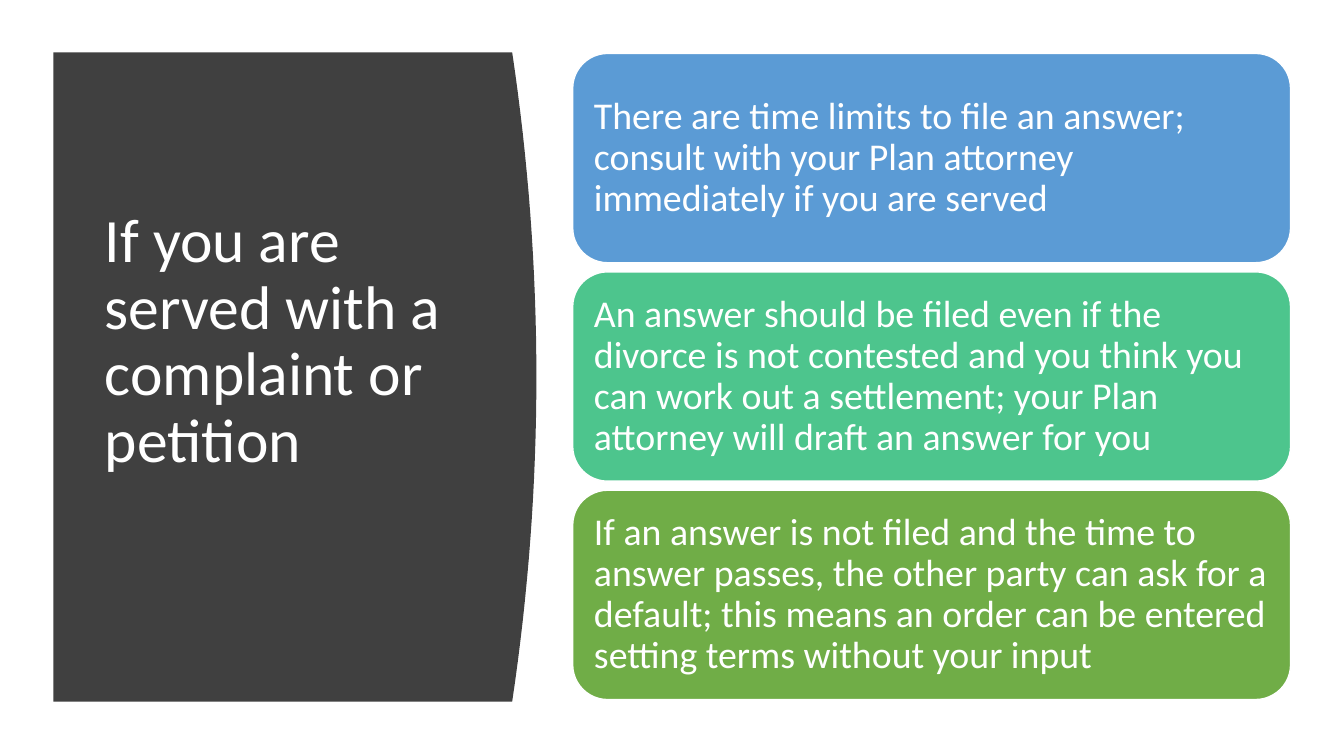
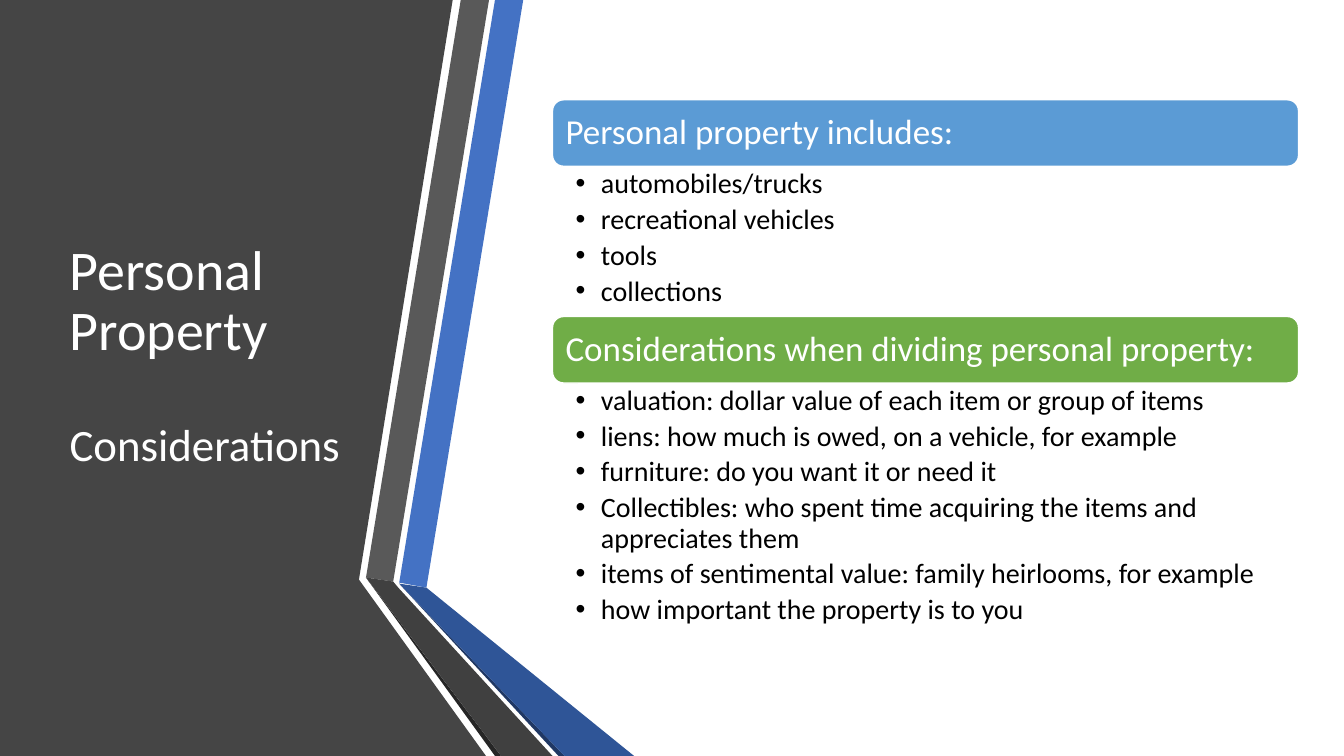
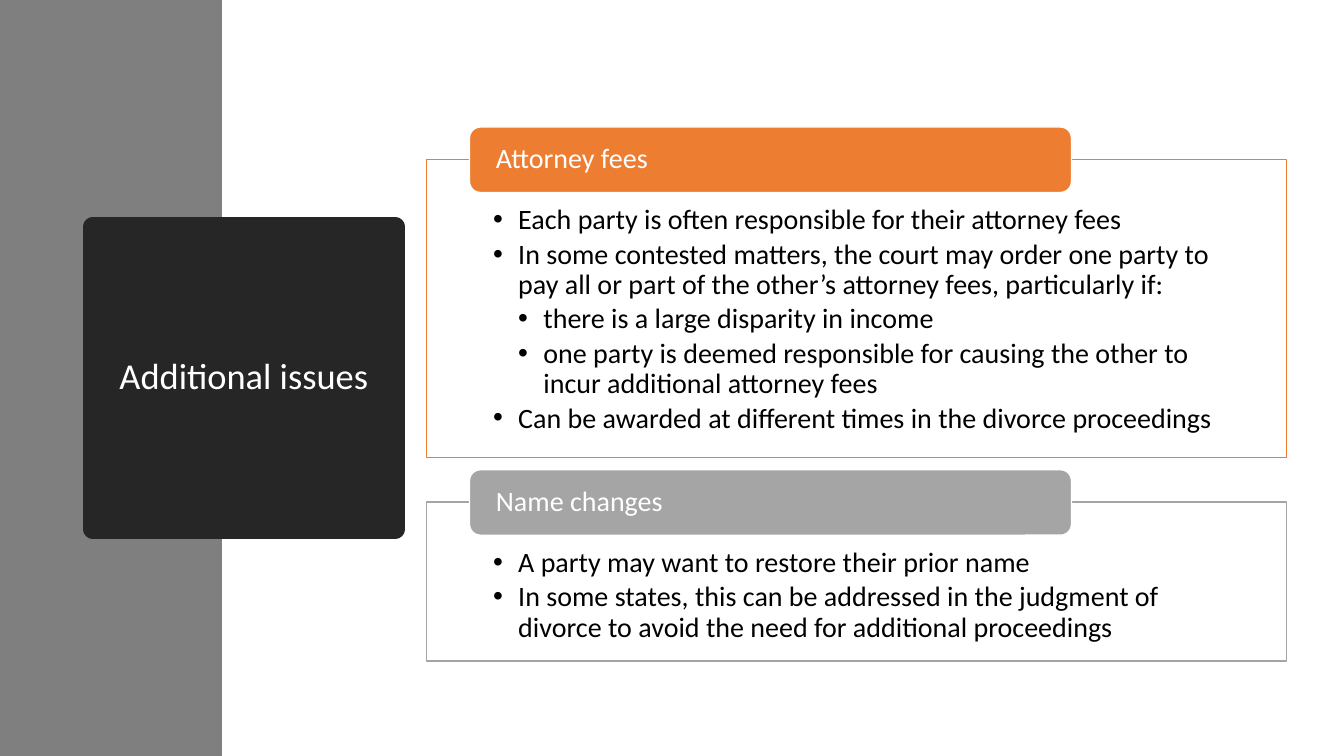
import pptx
import pptx.dml.color
import pptx.enum.shapes
import pptx.enum.text
import pptx.util
from lxml import etree
from pptx.oxml.ns import qn

Inches = pptx.util.Inches
Pt = pptx.util.Pt
RGBColor = pptx.dml.color.RGBColor
ShapeType = pptx.enum.shapes.MSO_SHAPE
Align = pptx.enum.text.PP_ALIGN
Anchor = pptx.enum.text.MSO_ANCHOR

WHITE = RGBColor(0xFF, 0xFF, 0xFF)
BLACK = RGBColor(0x00, 0x00, 0x00)
CHARCOAL = RGBColor(0x40, 0x40, 0x40)
PANEL_GRAY = RGBColor(0x45, 0x45, 0x45)
STRIPE_GRAY = RGBColor(0x59, 0x59, 0x59)
BAND_GRAY = RGBColor(0x7F, 0x7F, 0x7F)
SILVER = RGBColor(0xA5, 0xA5, 0xA5)
NEAR_BLACK = RGBColor(0x26, 0x26, 0x26)
SKY = RGBColor(0x5B, 0x9B, 0xD5)
MINT = RGBColor(0x4D, 0xC5, 0x8D)
GREEN = RGBColor(0x70, 0xAD, 0x47)
ORANGE = RGBColor(0xED, 0x7D, 0x31)
BLUE = RGBColor(0x44, 0x72, 0xC4)
DEEP_BLUE = RGBColor(0x2F, 0x55, 0x97)
NAVY = RGBColor(0x20, 0x38, 0x64)

FONT = "Calibri"
SLIDE_WIDTH, SLIDE_HEIGHT = 13.33, 7.5
TITLE_ONLY, TWO_CONTENT = 5, 3
BULLET_INDENT = 0.25


def format_paragraph(paragraph, size, color, align=Align.LEFT, after=0):
    paragraph.alignment = align
    paragraph.line_spacing = 0.9
    paragraph.space_before = Pt(0)
    paragraph.space_after = Pt(after)
    paragraph.font.name = FONT
    paragraph.font.size = Pt(size)
    paragraph.font.color.rgb = color


def place(shape, box):
    shape.left, shape.top, shape.width, shape.height = map(Inches, box)


def set_up_frame(frame, insets, anchor):
    """Insets run left, top, right, bottom."""
    frame.word_wrap = True
    frame.auto_size = pptx.enum.text.MSO_AUTO_SIZE.NONE
    frame.vertical_anchor = anchor
    (frame.margin_left, frame.margin_top,
     frame.margin_right, frame.margin_bottom) = map(Inches, insets)


def set_title(slide, box, lines, align=Align.LEFT):
    """Lines are (text, size) pairs, one paragraph each."""
    title = slide.shapes.title
    place(title, box)
    frame = title.text_frame
    set_up_frame(frame, (0.1, 0.05, 0.1, 0.05), Anchor.MIDDLE)
    frame.text = "\n".join(text for text, size in lines)
    for paragraph, (text, size) in zip(frame.paragraphs, lines):
        format_paragraph(paragraph, size, WHITE, align)
    return title


def fill_list(placeholder, box, insets, items, after):
    """Items are (text, level) pairs."""
    place(placeholder, box)
    frame = placeholder.text_frame
    set_up_frame(frame, insets, Anchor.TOP)
    frame.text = "\n".join(text for text, level in items)
    for paragraph, (text, level) in zip(frame.paragraphs, items):
        paragraph.level = level
        format_paragraph(paragraph, 20, BLACK, after=after)
        properties = paragraph._p.get_or_add_pPr()
        properties.set("marL", str(Inches(BULLET_INDENT * (level + 1))))
        properties.set("indent", str(-Inches(BULLET_INDENT)))
        bullet = etree.Element(qn("a:buChar"), char="•")
        properties.find(qn("a:spcAft")).addnext(bullet)


def add_card(slide, box, text, size, color, inset):
    """Rounded box with white text."""
    card = slide.shapes.add_shape(ShapeType.ROUNDED_RECTANGLE, *map(Inches, box))
    card.shadow.inherit = False
    card.fill.solid()
    card.fill.fore_color.rgb = color
    card.line.color.rgb = WHITE
    card.line.width = Pt(1)
    set_up_frame(card.text_frame, (inset, 0, inset, 0), Anchor.MIDDLE)
    card.text_frame.text = text
    format_paragraph(card.text_frame.paragraphs[0], size, WHITE)


def add_polygon(slide, origin, points, color):
    left, top = origin
    corners = [(Inches(left + x), Inches(top + y)) for x, y in points]
    builder = slide.shapes.build_freeform(*corners[0])
    builder.add_line_segments(corners[1:], close=True)
    polygon = builder.convert_to_shape()
    polygon.shadow.inherit = False
    polygon.fill.solid()
    polygon.fill.fore_color.rgb = color
    polygon.line.fill.background()
    return polygon


def send_to_back(shape):
    shape._element.getparent().insert(2, shape._element)


def add_bowed_panel(slide, box, bulge, steps=32):
    """Dark panel whose right edge bows outwards by the bulge."""
    left, top, width, height = box
    points = [(0, 0)]
    for step in range(steps + 1):
        t = 2 * step / steps - 1
        points.append((width - bulge * t * t, height * step / steps))
    points.append((0, height))
    send_to_back(add_polygon(slide, (left, top), points, CHARCOAL))


def add_folded_ribbons(slide, origin):
    """Dark panel with two ribbons that fold near the bottom."""
    panel = [(0, 0), (4.49, 0), (3.56, 5.75), (4.82, 7.5), (0, 7.5)]
    send_to_back(add_polygon(slide, origin, panel, PANEL_GRAY))
    ribbons = [
        (BLUE, [(3.96, 5.78), (4.23, 5.83), (5.19, 0), (4.91, 0)]),
        (STRIPE_GRAY, [(4.85, 0), (4.57, 0), (3.63, 5.73), (3.9, 5.77)]),
        (NEAR_BLACK, [(3.63, 5.73), (4.91, 7.5), (4.97, 7.5)]),
        (NAVY, [(3.96, 5.79), (5.54, 7.5), (5.6, 7.5)]),
        (DEEP_BLUE, [(3.96, 5.79), (5.6, 7.5), (6.29, 7.5), (4.23, 5.83)]),
        (CHARCOAL, [(5.48, 7.5), (3.95, 5.83), (3.9, 5.77), (3.63, 5.73), (4.97, 7.5)]),
    ]
    for color, points in ribbons:
        add_polygon(slide, origin, points, color)


def add_card_stack(slide, box, cards, gap):
    left, top, width, height = box
    card_height = (height - gap * (len(cards) - 1)) / len(cards)
    for index, (text, color) in enumerate(cards):
        card_top = top + index * (card_height + gap)
        add_card(slide, (left, card_top, width, card_height), text, 27, color, 0.11)


def add_headed_list(slide, placeholder, box, heading, color, items):
    """Full-width heading bar with a list below it."""
    left, top, width, height = box
    bar_height = 0.66
    add_card(slide, (left, top, width, bar_height), heading, 25, color, 0.1)
    list_box = (left, top + bar_height, width, height - bar_height)
    fill_list(placeholder, list_box, (0.23, 0.03, 0.19, 0.03),
              [(item, 0) for item in items], after=4)


def add_tabbed_list(slide, placeholder, box, heading, color, items):
    """Outlined list with a heading tab across its top edge."""
    left, top, width, height = box
    fill_list(placeholder, box, (0.66, 0.46, 0.66, 0.16), items, after=3)
    placeholder.fill.solid()
    placeholder.fill.fore_color.rgb = WHITE
    placeholder.line.color.rgb = color
    placeholder.line.width = Pt(1)
    tab = (left + 0.05 * width, top - 0.32, 0.7 * width, 0.65)
    add_card(slide, tab, heading, 20, color, 0.23)


def add_slide(presentation, layout):
    return presentation.slides.add_slide(presentation.slide_layouts[layout])


def build_complaint_slide(presentation):
    slide = add_slide(presentation, TITLE_ONLY)
    add_bowed_panel(slide, (0.53, 0.52, 4.79, 6.44), bulge=0.24)
    set_title(slide, (0.94, 1.11, 3.74, 4.58),
              [("If you are served with a complaint or petition", 44)])
    add_card_stack(slide, (5.68, 0.53, 7.12, 6.41), [
        ("There are time limits to file an answer; consult with your Plan "
         "attorney immediately if you are served", SKY),
        ("An answer should be filed even if the divorce is not contested and you "
         "think you can work out a settlement; your Plan attorney will draft an "
         "answer for you", MINT),
        ("If an answer is not filed and the time to answer passes, the other party "
         "can ask for a default; this means an order can be entered setting terms "
         "without your input", GREEN),
    ], gap=0.09)


def build_property_slide(presentation):
    slide = add_slide(presentation, TWO_CONTENT)
    add_folded_ribbons(slide, (0, 0))
    title = set_title(slide, (0.59, 0.75, 3.04, 5.58),
                      [("Personal Property", 40), ("Considerations", 32)])
    title.text_frame.paragraphs[1].space_before = Pt(43)
    add_headed_list(slide, slide.placeholders[1], (5.48, 0.99, 7.4, 2.15),
                    "Personal property includes:", SKY,
                    ["automobiles/trucks", "recreational vehicles", "tools", "collections"])
    add_headed_list(slide, slide.placeholders[2], (5.48, 3.14, 7.4, 3.21),
                    "Considerations when dividing personal property:", GREEN, [
                        "valuation: dollar value of each item or group of items",
                        "liens: how much is owed, on a vehicle, for example",
                        "furniture: do you want it or need it",
                        "Collectibles: who spent time acquiring the items and appreciates them",
                        "items of sentimental value: family heirlooms, for example",
                        "how important the property is to you",
                    ])


def build_issues_slide(presentation):
    slide = add_slide(presentation, TWO_CONTENT)
    band = [(0, 0), (2.2, 0), (2.2, SLIDE_HEIGHT), (0, SLIDE_HEIGHT)]
    send_to_back(add_polygon(slide, (0, 0), band, BAND_GRAY))
    title = set_title(slide, (0.92, 2.25, 3, 3), [("Additional issues", 26)], Align.CENTER)
    title.fill.solid()
    title.fill.fore_color.rgb = NEAR_BLACK
    title.line.color.rgb = NEAR_BLACK
    title.line.width = Pt(13.75)
    add_tabbed_list(slide, slide.placeholders[1], (4.23, 1.58, 8.53, 2.96),
                    "Attorney fees", ORANGE, [
                        ("Each party is often responsible for their attorney fees", 0),
                        ("In some contested matters, the court may order one party to pay all "
                         "or part of the other’s attorney fees, particularly if:", 0),
                        ("there is a large disparity in income", 1),
                        ("one party is deemed responsible for causing the other to incur "
                         "additional attorney fees", 1),
                        ("Can be awarded at different times in the divorce proceedings", 0),
                    ])
    add_tabbed_list(slide, slide.placeholders[2], (4.23, 4.98, 8.53, 1.58),
                    "Name changes", SILVER, [
                        ("A party may want to restore their prior name", 0),
                        ("In some states, this can be addressed in the judgment of divorce to "
                         "avoid the need for additional proceedings", 0),
                    ])


def main():
    presentation = pptx.Presentation()
    presentation.slide_width = Inches(SLIDE_WIDTH)
    presentation.slide_height = Inches(SLIDE_HEIGHT)
    build_complaint_slide(presentation)
    build_property_slide(presentation)
    build_issues_slide(presentation)
    presentation.save("out.pptx")


if __name__ == "__main__":
    main()
